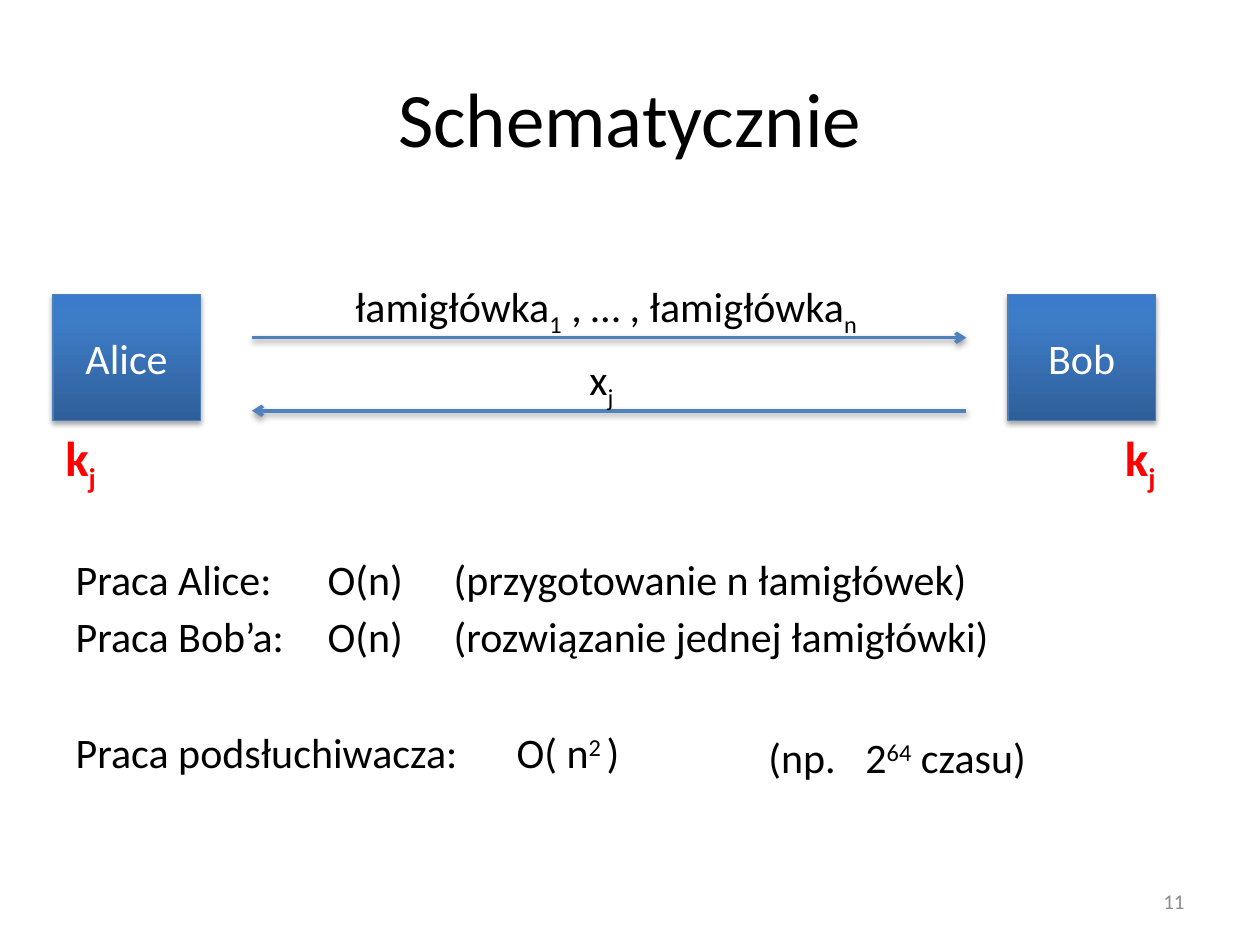
import pptx
import pptx.util
import pptx.dml.color
import pptx.enum.shapes
import pptx.enum.text
import pptx.oxml.ns
import copy
import lxml.etree

Inches = pptx.util.Inches
Pt = pptx.util.Pt
ALIGN = pptx.enum.text.PP_ALIGN
ANCHOR = pptx.enum.text.MSO_ANCHOR

HUES = {
    "text": "000000", "light": "FFFFFF", "key": "FF0000", "page": "8C8C8C",
    "edge": "4B7EBC", "arrow": "4F81BD", "shade": "000000",
    "low": "2F5F99", "mid": "3D7CC7", "high": "3A7CCB",
}


def hue(name):
    return pptx.dml.color.RGBColor.from_string(HUES[name])


def node(parent, tag, **attrs):
    """Add a child in the drawing namespace."""
    return lxml.etree.SubElement(parent, pptx.oxml.ns.qn("a:" + tag), attrs)


def write(para, runs, size=24, color="text", bold=False, align=ALIGN.LEFT):
    """Fill a paragraph; a run is a text or a (text, baseline percent) pair."""
    para.alignment = align
    for item in [runs] if isinstance(runs, str) else runs:
        text, base = (item, 0) if isinstance(item, str) else item
        run = para.add_run()
        run.text = text
        font = run.font
        font.name, font.size, font.bold = "Calibri", Pt(size), bold
        font.color.rgb = hue(color)
        if base:
            font._element.set("baseline", str(base * 1000))


def tabs(para, *stops):
    """Set left tab stops, in inches from the text edge."""
    group = node(para._p.get_or_add_pPr(), "tabLst")
    for stop in stops:
        node(group, "tab", pos=str(Inches(stop)), algn="l")


def shade(shape, alpha, dist):
    effects = node(shape._element.spPr, "effectLst")
    shadow = node(effects, "outerShdw", blurRad=str(Pt(3.1)),
                  dist=str(Pt(dist)), dir="5400000", rotWithShape="0")
    tint = node(shadow, "srgbClr", val=HUES["shade"])
    node(tint, "alpha", val=str(alpha * 1000))


def place(shape, left, top, width, height):
    shape.left, shape.top = Inches(left), Inches(top)
    shape.width, shape.height = Inches(width), Inches(height)


def label(slide, left, top, width, height, runs, **style):
    box = slide.shapes.add_textbox(*map(Inches, (left, top, width, height)))
    box.text_frame.word_wrap = False
    write(box.text_frame.paragraphs[0], runs, **style)
    return box


def party(slide, left, name):
    box = slide.shapes.add_shape(
        pptx.enum.shapes.MSO_SHAPE.RECTANGLE,
        Inches(left), Inches(2.34), Inches(1.17), Inches(1))
    box.fill.gradient()
    box.fill.gradient_angle = 90
    first = box.fill.gradient_stops[0]._gs
    first.addnext(copy.deepcopy(first))
    ramp = ((0, "low"), (0.8, "mid"), (1, "high"))
    for stop, (pos, color) in zip(box.fill.gradient_stops, ramp):
        stop.position = pos
        stop.color.rgb = hue(color)
    box.line.color.rgb = hue("edge")
    box.line.width = Pt(0.75)
    shade(box, 35, 1.8)
    box.text_frame.vertical_anchor = ANCHOR.MIDDLE
    write(box.text_frame.paragraphs[0], name, color="light",
          align=ALIGN.CENTER)


def arrow(slide, start, end, top):
    line = slide.shapes.add_connector(
        pptx.enum.shapes.MSO_CONNECTOR.STRAIGHT,
        Inches(start), Inches(top), Inches(end), Inches(top))
    line.line.color.rgb = hue("arrow")
    line.line.width = Pt(2)
    node(line.line._get_or_add_ln(), "tailEnd", type="arrow")
    shade(line, 38, 1.6)


def costs(body):
    place(body, 0.5, 4.34, 9, 2)
    frame = body.text_frame
    frame.auto_size = pptx.enum.text.MSO_AUTO_SIZE.NONE
    rows = [
        ("Praca Alice:\tO(n)\t(przygotowanie n łamigłówek)", (1.86, 4), 4),
        ("Praca Bob’a:\tO(n)\t(rozwiązanie jednej łamigłówki)", (1.88, 4), 4),
        (["Praca podsłuchiwacza:\tO( n", ("2 ", 30), ")"], (3.4,), 37.5),
    ]
    for index, (runs, stops, gap) in enumerate(rows):
        para = frame.add_paragraph() if index else frame.paragraphs[0]
        para.space_before = Pt(gap)
        props = para._p.get_or_add_pPr()
        props.set("marL", "0")
        props.set("indent", "0")
        node(props, "buNone")
        tabs(para, *stops)
        write(para, runs)


def main():
    deck = pptx.Presentation()
    deck.slide_width, deck.slide_height = Inches(10), Inches(7.5)
    slide = deck.slides.add_slide(deck.slide_layouts[1])
    title, body = slide.placeholders

    place(title, 0.5, 0.3, 9, 1.25)
    title.text_frame.vertical_anchor = ANCHOR.MIDDLE
    write(title.text_frame.paragraphs[0], "Schematycznie", size=44,
          align=ALIGN.CENTER)
    costs(body)

    for left, name in ((8, "Bob"), (0.42, "Alice")):
        party(slide, left, name)
    arrow(slide, 2, 7.67, 2.68)
    arrow(slide, 7.67, 2, 3.26)

    label(slide, 2.72, 2.18, 4.34, 0.5,
          ["łamigłówka", ("1", -25), " , … , łamigłówka", ("n", -25)])
    label(slide, 4.58, 2.76, 0.4, 0.5, ["x", ("j", -25)])
    for left in (0.42, 8.83):
        label(slide, left, 3.34, 0.46, 0.57, ["k", ("j", -25)],
              size=28, color="key", bold=True)
    power = label(slide, 6, 5.76, 2.31, 0.5,
                  ["(np.\t2", ("64", 30), " czasu)"])
    tabs(power.text_frame.paragraphs[0], 0.77)

    page = label(slide, 7.17, 6.95, 2.33, 0.4, "11", size=12, color="page",
                 align=ALIGN.RIGHT)
    page.text_frame.word_wrap = True
    page.text_frame.vertical_anchor = ANCHOR.MIDDLE
    deck.save("out.pptx")


if __name__ == "__main__":
    main()
